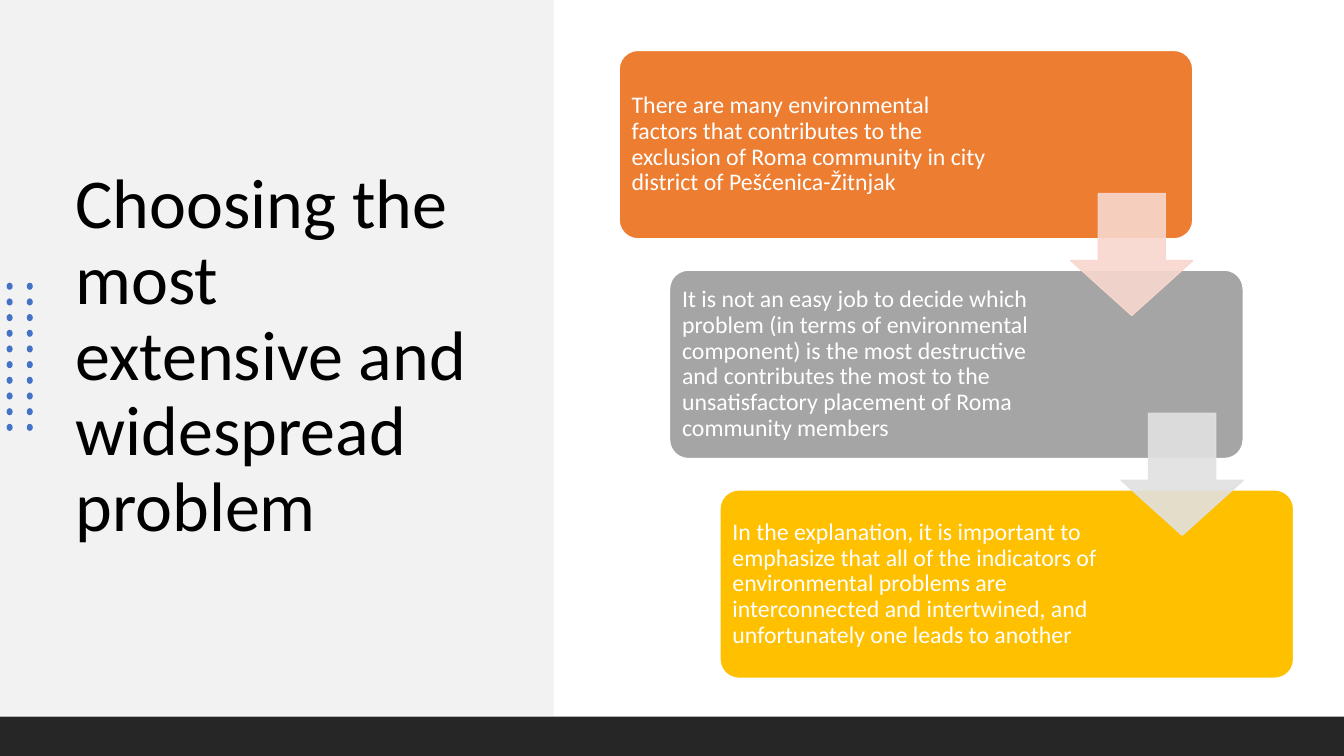
import pptx
import pptx.dml.color
import pptx.enum.shapes
import pptx.enum.text
import pptx.oxml.ns
import pptx.util
from lxml import etree

Inches = pptx.util.Inches
Pt = pptx.util.Pt
SHAPE = pptx.enum.shapes.MSO_SHAPE
FONT = "Calibri"
COLORS = {
    "panel": "F2F2F2", "footer": "262626", "dot": "4472C4",
    "black": "000000", "white": "FFFFFF",
    "orange": "ED7D31", "gray": "A5A5A5", "gold": "FFC000",
    "pink": "F8D7CE", "silver": "E1E1E1",
}
TITLE = "Choosing the most extensive and widespread problem"
STEPS = [
    ("There are many environmental factors that contributes to the exclusion "
     "of Roma community in city district of Pešćenica-Žitnjak", "orange", 3.67),
    ("It is not an easy job to decide which problem (in terms of environmental "
     "component) is the most destructive and contributes the most to the "
     "unsatisfactory placement of Roma community members", "gray", 3.86),
    ("In the explanation, it is important to emphasize that all of the "
     "indicators of environmental problems are interconnected and intertwined, "
     "and unfortunately one leads to another", "gold", 3.86),
]
ARROWS = ["pink", "silver"]


def rgb(name):
    return pptx.dml.color.RGBColor.from_string(COLORS[name])


def add_shape(shapes, kind, box, fill, line=None, adj=(), alpha=None):
    sp = shapes.add_shape(kind, *map(Inches, box))
    sp.shadow.inherit = False
    sp.fill.solid()
    sp.fill.fore_color.rgb = rgb(fill)
    if line:
        sp.line.color.rgb = rgb(line)
        sp.line.width = Pt(1)
    else:
        sp.line.fill.background()
    for i, value in enumerate(adj):
        sp.adjustments[i] = value
    if alpha:
        qn = pptx.oxml.ns.qn
        for clr in sp.element.spPr.iter(qn("a:srgbClr")):
            etree.SubElement(clr, qn("a:alpha")).set("val", str(alpha * 1000))
    return sp


def add_text(shapes, box, text, size, color, inset=None, after=0):
    tf = shapes.add_textbox(*map(Inches, box)).text_frame
    tf.word_wrap = True
    tf.vertical_anchor = pptx.enum.text.MSO_ANCHOR.MIDDLE
    if inset is not None:
        tf.margin_left = tf.margin_right = Inches(inset)
        tf.margin_top = tf.margin_bottom = Inches(inset)
    p = tf.paragraphs[0]
    p.line_spacing = 0.9
    p.space_after = Pt(after)
    r = p.add_run()
    r.text = text
    r.font.size = Pt(size)
    r.font.name = FONT
    r.font.color.rgb = rgb(color)


def add_dots(slide, left, top, width, height, cols=2, rows=10):
    group = slide.shapes.add_group_shape()
    w, h = 0.07, 0.06
    dx = (width - w) / (cols - 1)
    dy = (height - h) / (rows - 1)
    for row in range(rows):
        for col in range(cols):
            box = (left + col * dx, top + row * dy, w, h)
            sp = add_shape(group.shapes, SHAPE.OVAL, box, "dot")
            sp.rotation = 90


def add_title_panel(slide, left, top, width, height):
    add_shape(slide.shapes, SHAPE.RECTANGLE, (left, top, width, height), "panel")
    add_text(slide.shapes, (left + 0.65, top + 1.32, 4.24, 4.45), TITLE, 50, "black")
    add_dots(slide, left + 0.06, top + 2.81, 0.27, 1.46)


def add_steps(slide, left, top, width, height):
    shapes = slide.shapes.add_group_shape().shapes
    w, h, pad, arrow = 5.69, 1.87, 0.055, 1.21
    dx = (width - w) / (len(STEPS) - 1)
    dy = (height - h) / (len(STEPS) - 1)
    for i, (text, color, text_width) in enumerate(STEPS):
        x, y = left + i * dx, top + i * dy
        add_shape(shapes, SHAPE.ROUNDED_RECTANGLE, (x, y, w, h), color,
                  line="white", adj=(0.1,))
        add_text(shapes, (x + pad, y + pad, text_width, h - 2 * pad), text, 17,
                 "white", inset=0.07, after=6)
    for i, color in enumerate(ARROWS):
        box = (left + i * dx + w - arrow, top + i * dy + 1.42, arrow, arrow)
        add_shape(shapes, SHAPE.DOWN_ARROW, box, color, line=color,
                  adj=(0.55, 0.45), alpha=90)


def add_footer(slide, left, top, width, height):
    add_shape(slide.shapes, SHAPE.RECTANGLE, (left, top, width, height), "footer")


def main():
    prs = pptx.Presentation()
    prs.slide_width = Inches(13.33)
    prs.slide_height = Inches(7.5)
    slide = prs.slides.add_slide(prs.slide_layouts[6])
    add_title_panel(slide, 0, 0, 5.49, 7.1)
    add_footer(slide, 0, 7.11, 13.33, 0.39)
    add_steps(slide, 6.14, 0.5, 6.69, 6.23)
    prs.save("out.pptx")


if __name__ == "__main__":
    main()
